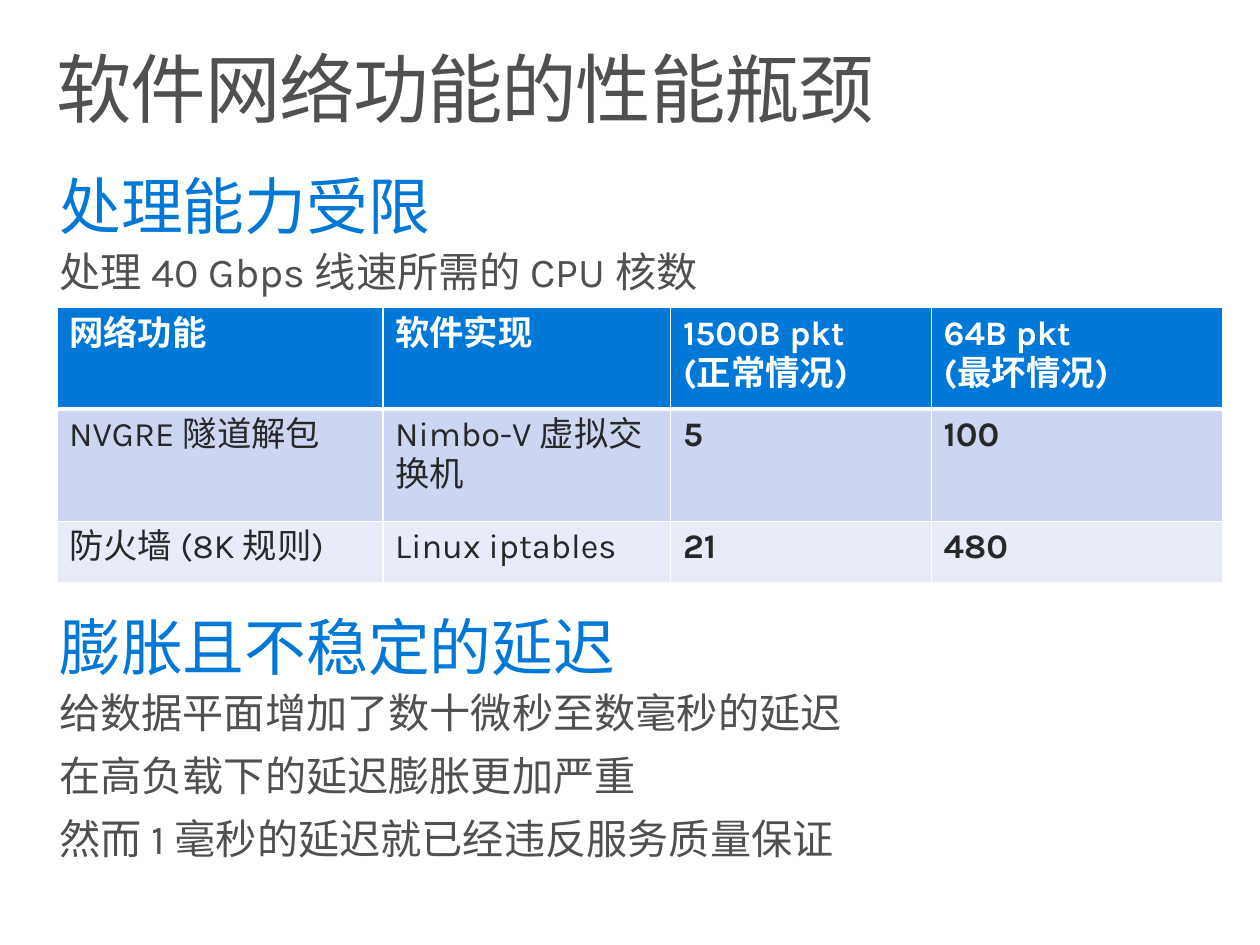
"""Build the slide on performance bottlenecks of software network functions."""
from dataclasses import dataclass

from lxml.etree import SubElement
from pptx import Presentation
from pptx.dml.color import RGBColor
from pptx.oxml import parse_xml
from pptx.oxml.ns import nsdecls, qn
from pptx.slide import Slide
from pptx.table import _Cell
from pptx.text.text import _Paragraph
from pptx.util import Inches, Pt


@dataclass(frozen=True)
class Theme:
    """Colours, font and type sizes of the slide."""
    font: str = "Karla"
    title_size: float = 44
    heading_size: float = 36
    detail_size: float = 24
    table_size: float = 20
    grey: str = "505050"
    blue: str = "0078D7"
    dark: str = "282828"
    white: str = "FFFFFF"
    bands: tuple[str, str] = ("CCD6F0", "E7ECF8")


@dataclass(frozen=True)
class Section:
    """A heading with its detail lines."""
    top: float
    height: float
    heading: str
    details: tuple[str, ...]


@dataclass(frozen=True)
class TableRow:
    """One table row with its height in inches."""
    height: float
    texts: tuple[str, str, str, str]


THEME = Theme()
TITLE = "软件网络功能的性能瓶颈"
SECTIONS = (
    Section(1.33, 1.16, "处理能力受限", ("处理 40 Gbps 线速所需的 CPU 核数",)),
    Section(4.9, 2.39, "膨胀且不稳定的延迟", (
        "给数据平面增加了数十微秒至数毫秒的延迟",
        "在高负载下的延迟膨胀更加严重",
        "然而 1 毫秒的延迟就已经违反服务质量保证",
    )),
)
COLUMN_WIDTHS = (2.64, 2.33, 2.11, 2.36)
TABLE_ROWS = (
    TableRow(0.82, ("网络功能", "软件实现", "1500B pkt\v(正常情况)", "64B pkt\v(最坏情况)")),
    TableRow(0.91, ("NVGRE 隧道解包", "Nimbo-V 虚拟交换机", "5", "100")),
    TableRow(0.5, ("防火墙 (8K 规则)", "Linux iptables", "21", "480")),
)


def style(paragraph: _Paragraph, size: float, color: str, bold: bool = False,
          tracking: int = 0) -> None:
    """Set the font of a whole paragraph."""
    font = paragraph.font
    font.name = THEME.font
    font.size = Pt(size)
    font.bold = bold
    font.color.rgb = RGBColor.from_string(color)
    properties = paragraph._p.get_or_add_pPr().find(qn("a:defRPr"))
    SubElement(properties, qn("a:ea")).set("typeface", THEME.font)
    if tracking:
        properties.set("spc", str(tracking))


def add_text(slide: Slide, left: float, top: float, width: float, height: float,
             inset: float, lines: tuple[str, ...]) -> list[_Paragraph]:
    """Add a wrapping text box and return its paragraphs."""
    box = slide.shapes.add_textbox(Inches(left), Inches(top), Inches(width), Inches(height))
    frame = box.text_frame
    frame.word_wrap = True
    frame.margin_left = frame.margin_right = Inches(inset)
    frame.margin_top = frame.margin_bottom = Inches(0.1)
    frame.text = "\n".join(lines)
    for paragraph in frame.paragraphs:
        paragraph.line_spacing = 0.9
    return list(frame.paragraphs)


def add_section(slide: Slide, section: Section) -> None:
    """Add a heading and its details."""
    heading, *details = add_text(slide, 0.3, section.top, 9.9, section.height, 0.18,
                                 (section.heading, *section.details))
    style(heading, THEME.heading_size, THEME.blue)
    for detail in details:
        detail.space_before = Pt(THEME.detail_size * 0.2)
        detail.space_after = Pt(6)
        style(detail, THEME.detail_size, THEME.grey)


def set_borders(cell: _Cell, top: float, bottom: float) -> None:
    """Draw white borders around a cell."""
    widths = {"lnL": 1, "lnR": 1, "lnT": top, "lnB": bottom}
    for index, (side, width) in enumerate(widths.items()):
        cell._tc.get_or_add_tcPr().insert(index, parse_xml(
            f'<a:{side} {nsdecls("a")} w="{Pt(width)}"><a:solidFill>'
            f'<a:srgbClr val="{THEME.white}"/></a:solidFill></a:{side}>'))


def add_core_table(slide: Slide) -> None:
    """Add the table of CPU cores needed per network function."""
    table = slide.shapes.add_table(
        len(TABLE_ROWS), len(COLUMN_WIDTHS), Inches(0.46), Inches(2.49),
        Inches(sum(COLUMN_WIDTHS)), Inches(sum(row.height for row in TABLE_ROWS))).table
    for column, width in zip(table.columns, COLUMN_WIDTHS):
        column.width = Inches(width)
    fills = (THEME.blue, *THEME.bands)
    for row_index, (row, fill) in enumerate(zip(TABLE_ROWS, fills)):
        table.rows[row_index].height = Inches(row.height)
        is_header = row_index == 0
        for column_index, text in enumerate(row.texts):
            cell = table.cell(row_index, column_index)
            cell.fill.solid()
            cell.fill.fore_color.rgb = RGBColor.from_string(fill)
            set_borders(cell, 3 if row_index == 1 else 1, 3 if is_header else 1)
            paragraph = cell.text_frame.paragraphs[0]
            paragraph.text = text
            style(paragraph, THEME.table_size, THEME.white if is_header else THEME.dark,
                  bold=is_header or column_index >= 2)


def main() -> None:
    """Build and save the presentation."""
    presentation = Presentation()
    presentation.slide_width = Inches(10.2)
    presentation.slide_height = Inches(7.65)
    slide = presentation.slides.add_slide(presentation.slide_layouts[6])
    title, = add_text(slide, 0.3, 0.32, 9.9, 1, 0.16, (TITLE,))
    style(title, THEME.title_size, THEME.grey, tracking=-80)
    for section in SECTIONS:
        add_section(slide, section)
    add_core_table(slide)
    presentation.save("out.pptx")


if __name__ == "__main__":
    main()
